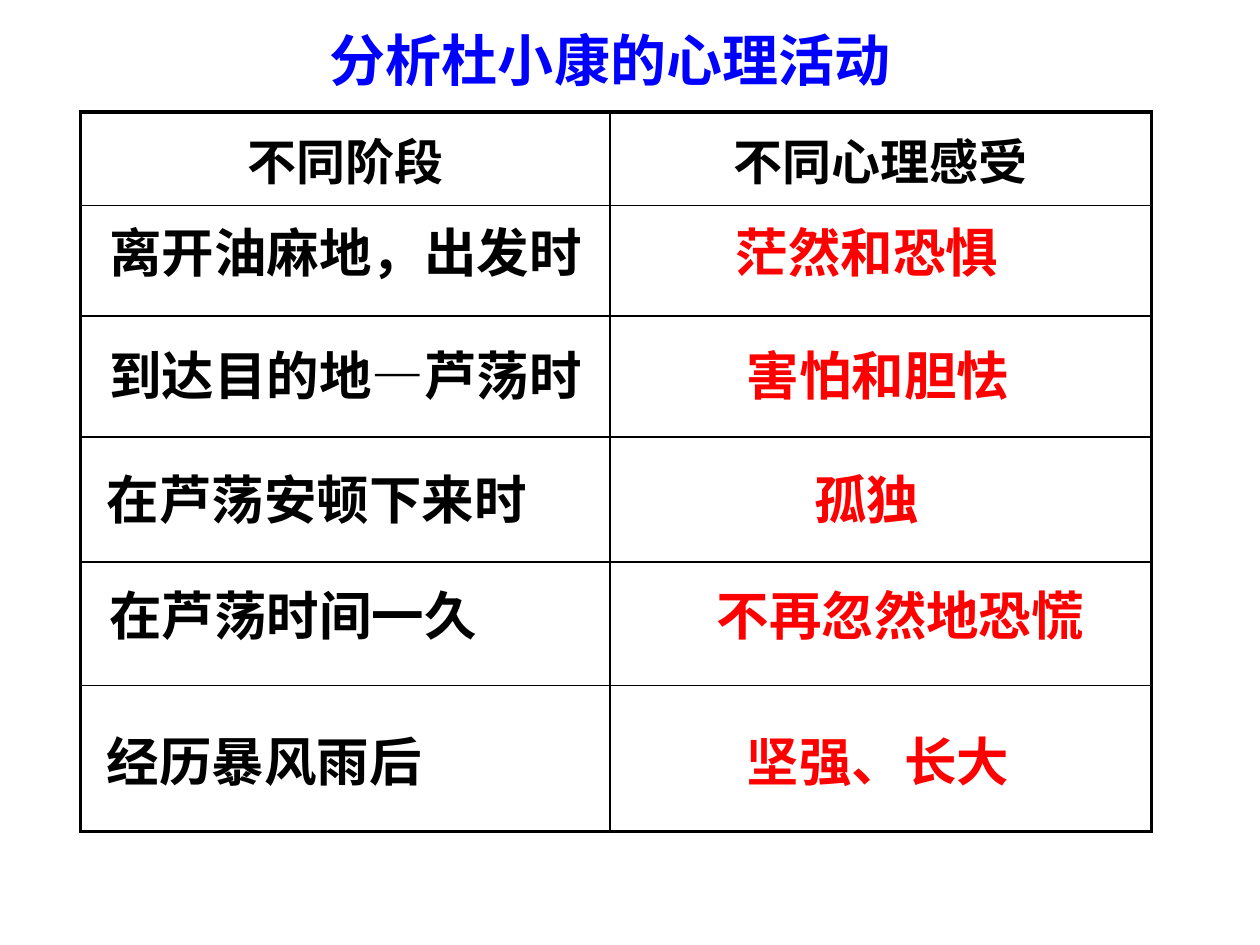
"""Build the slide on the stages of Du Xiaokang's feelings."""
from lxml import etree
from pptx import Presentation
from pptx.dml.color import RGBColor
from pptx.enum import text
from pptx.oxml import ns
from pptx.util import Inches, Pt

TITLE = "分析杜小康的心理活动"
HEADS = ["不同阶段", "不同心理感受"]
# stage, left; feeling, left, width; top
ROWS = [
    ("离开油麻地，出发时", 0.77, "茫然和恐惧", 5.38, 3, 1.7),
    ("到达目的地—芦荡时", 0.77, "害怕和胆怯", 5.47, 3, 2.67),
    ("在芦荡安顿下来时", 0.75, "孤独", 5.38, 3, 3.66),
    ("在芦荡时间一久", 0.77, "不再忽然地恐慌", 5.47, 3.35, 4.58),
    ("经历暴风雨后", 0.75, "坚强、长大", 5.47, 3, 5.74),
]
WIDTHS = [4.2, 4.3]
HEIGHTS = [0.74, 0.88, 0.96, 0.99, 0.98, 1.16]
SANS = "Noto Sans CJK SC"
BLACK, RED, BLUE, WHITE = "000000", "FF0000", "0000FF", "FFFFFF"
LEFT, MID = text.PP_ALIGN.LEFT, text.PP_ALIGN.CENTER


def paint(color, hue):
    color.rgb = RGBColor.from_string(hue)


def style(para, size, hue, align, face=SANS):
    para.alignment = align
    for run in para.runs:
        font = run.font
        font.size, font.bold, font.name = Pt(size), True, face
        font.fill.solid()
        paint(font.fill.fore_color, hue)
        latin = run._r.rPr.find(ns.qn("a:latin"))
        east = etree.Element(ns.qn("a:ea"), typeface=SANS)
        latin.addnext(east)


def label(slide, words, box, size, hue, align=LEFT):
    frame = slide.shapes.add_textbox(*map(Inches, box)).text_frame
    frame.word_wrap = True
    frame.vertical_anchor = text.MSO_ANCHOR.MIDDLE
    frame.text = words
    style(frame.paragraphs[0], size, hue, align)


def border(cell, edges):
    props = cell._tc.get_or_add_tcPr()
    for spot, (side, outer) in enumerate(edges):
        line = etree.Element(ns.qn("a:ln" + side), w=str(Pt(2.25 if outer else 1)))
        fill = etree.SubElement(line, ns.qn("a:solidFill"))
        etree.SubElement(fill, ns.qn("a:srgbClr"), val=BLACK)
        props.insert(spot, line)


def grid(slide):
    rows, cols = len(HEIGHTS), len(WIDTHS)
    box = map(Inches, (0.64, 0.89, sum(WIDTHS), sum(HEIGHTS)))
    table = slide.shapes.add_table(rows, cols, *box).table
    table.horz_banding = False
    for col, width in zip(table.columns, WIDTHS):
        col.width = Inches(width)
    for row, height in zip(table.rows, HEIGHTS):
        row.height = Inches(height)
    for r in range(rows):
        for c in range(cols):
            cell = table.cell(r, c)
            cell.fill.solid()
            paint(cell.fill.fore_color, WHITE)
            tint = cell._tc.tcPr.find(".//" + ns.qn("a:srgbClr"))
            etree.SubElement(tint, ns.qn("a:alpha"), val="15000")
            border(cell, [("L", c == 0), ("R", c == cols - 1),
                          ("T", r == 0), ("B", r == rows - 1)])
    for c, head in enumerate(HEADS):
        cell = table.cell(0, c)
        cell.vertical_anchor = text.MSO_ANCHOR.MIDDLE
        cell.text_frame.text = head
        para = cell.text_frame.paragraphs[0]
        para.space_before = Pt(1.3)
        style(para, 28, BLACK, MID, "Calibri")


def main():
    deck = Presentation()
    deck.slide_width, deck.slide_height = Inches(10), Inches(7.5)
    slide = deck.slides.add_slide(deck.slide_layouts[6])
    grid(slide)
    for stage, left, mood, start, width, top in ROWS:
        span = len(stage) * 30 / 72 + 0.3
        label(slide, stage, (left, top, span, 0.6), 30, BLACK)
        label(slide, mood, (start, top, width, 0.6), 30, RED, MID)
    label(slide, TITLE, (2.52, 0.15, 4.75, 0.64), 32, BLUE)
    deck.save("out.pptx")


if __name__ == "__main__":
    main()
